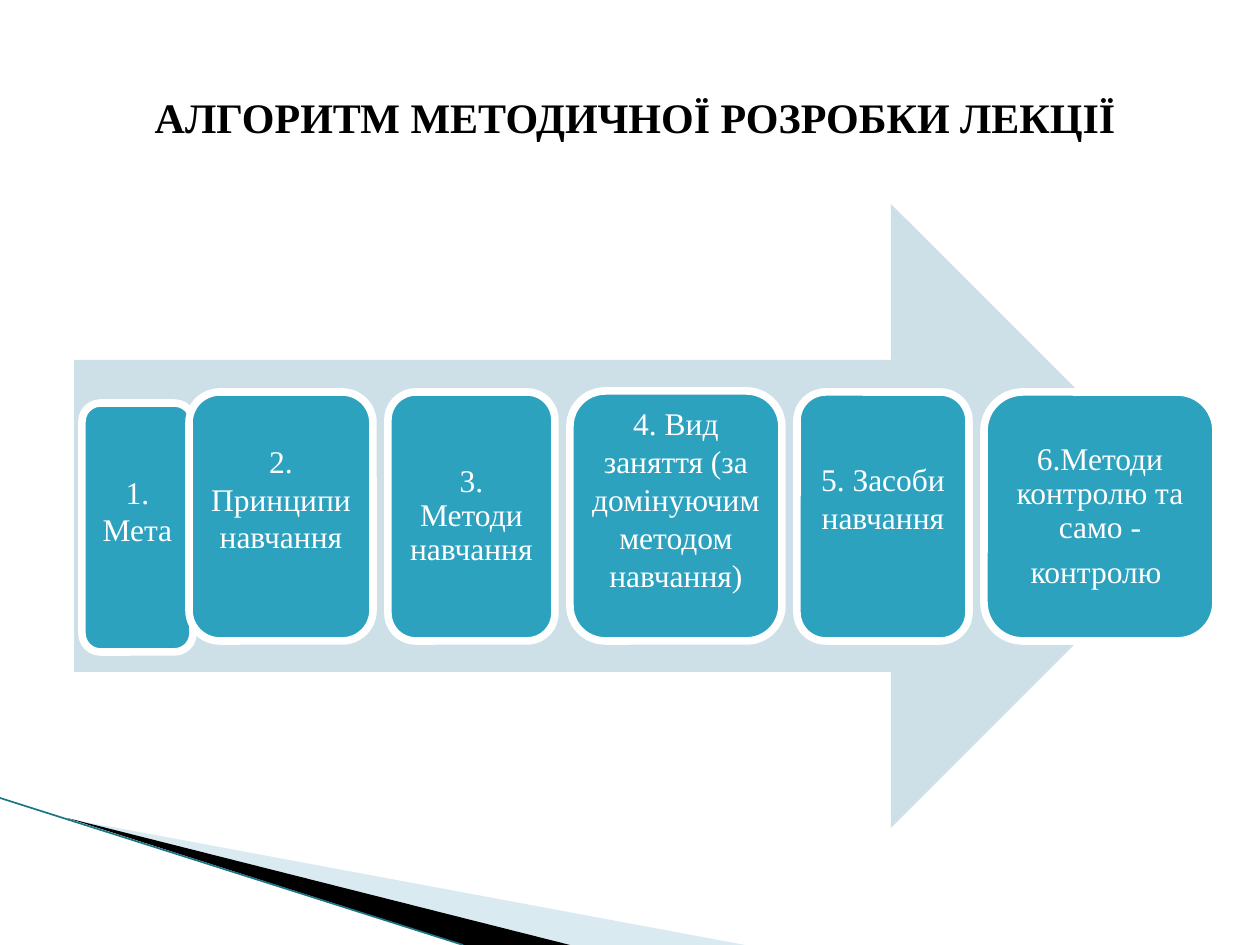
from lxml import etree
from pptx import Presentation
from pptx.dml.color import RGBColor
from pptx.enum.shapes import MSO_CONNECTOR, MSO_SHAPE
from pptx.enum.text import MSO_ANCHOR, PP_ALIGN
from pptx.oxml.ns import qn
from pptx.util import Pt

PX = 914400 // 126
STRAIGHT = MSO_CONNECTOR.STRAIGHT
ARROW, ROUNDED = MSO_SHAPE.RIGHT_ARROW, MSO_SHAPE.ROUNDED_RECTANGLE
MIDDLE, CENTER = MSO_ANCHOR.MIDDLE, PP_ALIGN.CENTER

FONT = "Times New Roman"
WHITE = RGBColor(0xFF, 0xFF, 0xFF)
BLACK = RGBColor(0, 0, 0)
TEAL = RGBColor(0x2D, 0xA2, 0xBF)
DARK_TEAL = RGBColor(0x1B, 0x75, 0x87)
PALE_BLUE = RGBColor(0xCD, 0xE0, 0xE8)
WEDGE_BLUE = RGBColor(0xA0, 0xCB, 0xDC)

INSET = 9
# left, top, width, height, room kept free below the text, line spacing, paragraphs
STEPS = [
    (82, 403, 111, 249, 34, 1.0, ["1. Мета"]),
    (189, 392, 184, 249, 36, 1.0, ["2. Принципи навчання"]),
    (388, 392, 167, 249, 0, 0.9, ["3. Методи навчання"]),
    (570, 391, 212, 250, 34, 1.0,
     ["4. Вид заняття (за домінуючим методом навчання)"]),
    (797, 392, 172, 249, 37, 1.0, ["5. Засоби навчання"]),
    (984, 392, 232, 249, 0, 0.9, ["6.Методи контролю та само -", "контролю "]),
]


def px(*lengths):
    return [length * PX for length in lengths]


def paint(shape, color):
    shape.shadow.inherit = False
    shape.fill.solid()
    shape.fill.fore_color.rgb = color
    shape.line.fill.background()


def add_wedge(page, points, color, opacity=100):
    builder = page.shapes.build_freeform(*points[0], scale=PX)
    builder.add_line_segments(points[1:], close=True)
    wedge = builder.convert_to_shape()
    paint(wedge, color)
    if opacity < 100:
        tint = wedge._element.spPr.find(qn("a:solidFill"))[0]
        etree.SubElement(tint, qn("a:alpha"), val=str(opacity * 1000))


def add_edge(page, start, end):
    edge = page.shapes.add_connector(STRAIGHT, *px(*start, *end))
    edge.line.color.rgb = DARK_TEAL
    edge.line.width = Pt(0.95)
    etree.SubElement(edge._element.spPr, qn("a:effectLst"))


def write(frame, texts, size, color, bold=False, spacing=1.0):
    frame.word_wrap = True
    frame.vertical_anchor = MIDDLE
    for index, text in enumerate(texts):
        para = frame.paragraphs[0] if index == 0 else frame.add_paragraph()
        para.alignment = CENTER
        para.line_spacing = spacing
        if index < len(texts) - 1:
            para.space_after = Pt(6.3)
        span = para.add_run()
        span.text = text
        span.font.name = FONT
        span.font.size = Pt(size)
        span.font.bold = bold
        span.font.color.rgb = color


def add_step(page, left, top, width, height, room, spacing, texts):
    box = page.shapes.add_shape(ROUNDED, *px(left, top, width, height))
    paint(box, TEAL)
    box.line.color.rgb = WHITE
    box.line.width = Pt(4.33)
    frame = box.text_frame
    frame.margin_left = frame.margin_right = frame.margin_top = INSET * PX
    frame.margin_bottom = (INSET + room) * PX
    write(frame, texts, 18, WHITE, spacing=spacing)


def main():
    deck = Presentation()
    deck.slide_width, deck.slide_height = px(1260, 945)
    page = deck.slides.add_slide(deck.slide_layouts[6])

    # Corner decoration
    add_wedge(page, [(69, 819), (745, 945), (570, 945)], WEDGE_BLUE, 40)
    add_wedge(page, [(67, 818), (570, 945), (464, 945)], BLACK)
    add_edge(page, (0, 798), (463, 945))

    # Arrow with the six steps
    arrow = page.shapes.add_shape(ARROW, *px(74, 204, 1129, 624))
    paint(arrow, PALE_BLUE)
    for step in STEPS:
        add_step(page, *step)

    # Title
    title = page.shapes.add_textbox(*px(63, 38, 1134, 158))
    write(title.text_frame, [" АЛГОРИТМ МЕТОДИЧНОЇ РОЗРОБКИ ЛЕКЦІЇ"], 24, BLACK, bold=True)

    deck.save("out.pptx")


if __name__ == "__main__":
    main()
